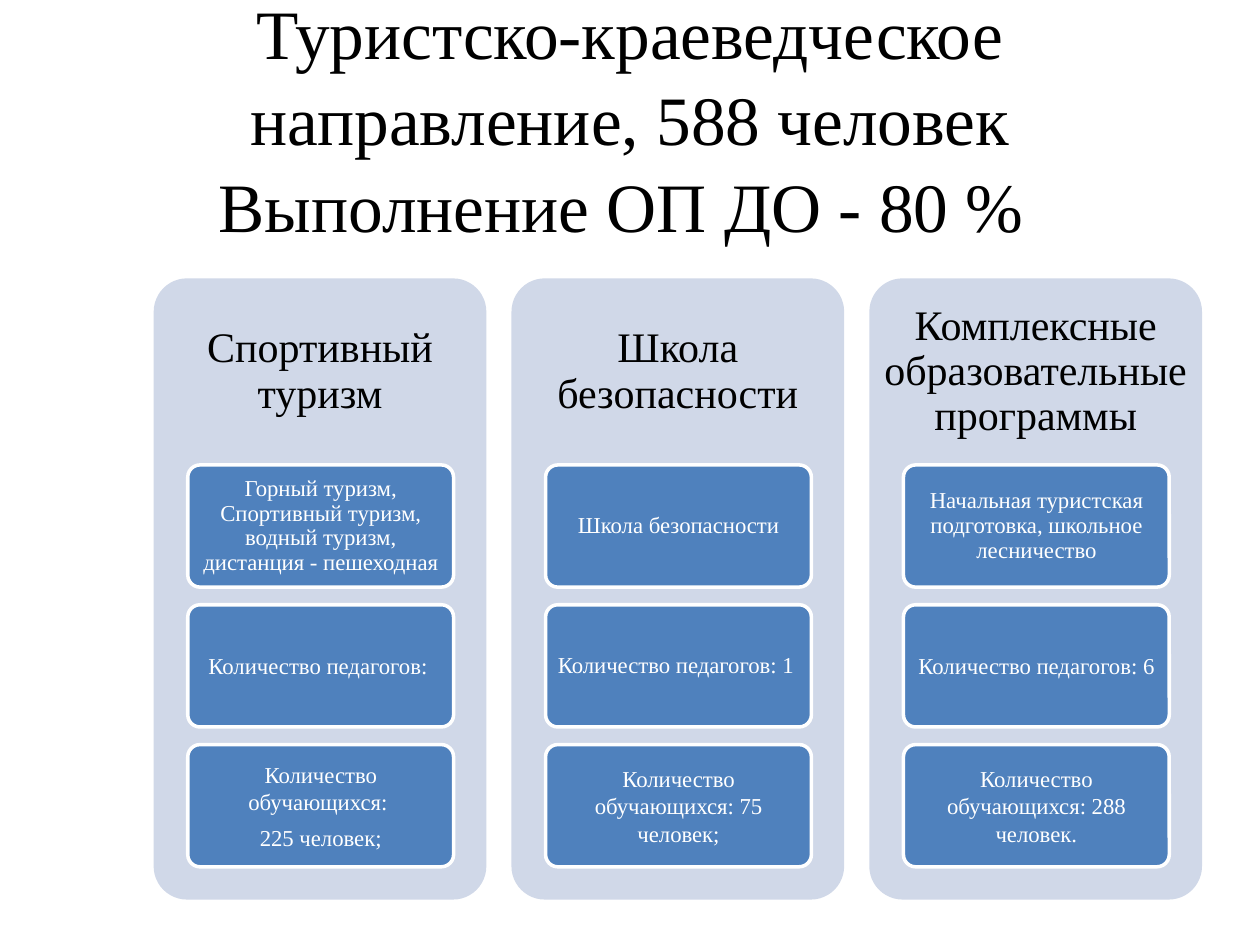
import dataclasses

import pptx
import pptx.dml.color
import pptx.enum.shapes
import pptx.enum.text
import pptx.util
from pptx.util import Inches


@dataclasses.dataclass(frozen=True)
class Theme:
    font: str = "Times New Roman"
    dark: str = "000000"
    light: str = "FFFFFF"
    panel: str = "D0D8E8"
    card: str = "4F81BD"
    title_size: float = 39.6
    heading_size: float = 24
    card_size: float = 13
    outline: float = 2
    tight: float = 0.9


THEME = Theme()

TITLE = "Туристско-краеведческое направление, 588 человек\vВыполнение ОП ДО - 80 % "

DIRECTIONS = [
    ("Спортивный туризм", [
        ("Горный туризм, Спортивный туризм, водный туризм, дистанция - пешеходная", THEME.tight),
        ("Количество педагогов: ", 1.0),
        ("Количество обучающихся: \n225 человек;", 1.0),
    ]),
    ("Школа безопасности", [
        ("Школа безопасности", THEME.tight),
        ("Количество педагогов: 1 ", THEME.tight),
        ("Количество обучающихся: 75 человек;", 1.0),
    ]),
    ("Комплексные образовательные программы", [
        ("Начальная туристская подготовка, школьное лесничество", THEME.tight),
        ("Количество педагогов: 6", 1.0),
        ("Количество обучающихся: 288 человек.", 1.0),
    ]),
]

PANEL_LEFT, PANEL_TOP, PANEL_WIDTH, PANEL_HEIGHT = 1.22, 2.21, 2.64, 4.93
PANEL_STEP = 2.84
HEADING_HEIGHT = 1.48
CARD_INDENT, CARD_WIDTH, CARD_HEIGHT = 0.27, 2.11, 0.97
CARD_STEP = 1.11


def rgb(code):
    return pptx.dml.color.RGBColor.from_string(code)


def write_text(holder, text, *, size, color, line_spacing=1.0, margins=(0.1, 0.1)):
    frame = holder.text_frame
    frame.word_wrap = True
    frame.vertical_anchor = pptx.enum.text.MSO_ANCHOR.MIDDLE
    frame.margin_left = frame.margin_right = Inches(margins[0])
    frame.margin_top = frame.margin_bottom = Inches(margins[1])
    frame.text = text
    for paragraph in frame.paragraphs:
        paragraph.alignment = pptx.enum.text.PP_ALIGN.CENTER
        paragraph.line_spacing = line_spacing
        paragraph.font.name = THEME.font
        paragraph.font.size = pptx.util.Pt(size)
        paragraph.font.color.rgb = rgb(color)
    for paragraph in frame.paragraphs[:-1]:
        paragraph.space_after = pptx.util.Pt(0.35 * size)


def add_label(slide, left, top, width, height, text, **text_format):
    label = slide.shapes.add_textbox(
        Inches(left), Inches(top), Inches(width), Inches(height))
    write_text(label, text, **text_format)


def add_rounded(slide, left, top, width, height, fill, outline=None):
    block = slide.shapes.add_shape(
        pptx.enum.shapes.MSO_SHAPE.ROUNDED_RECTANGLE,
        Inches(left), Inches(top), Inches(width), Inches(height))
    block.adjustments[0] = 0.1
    block.shadow.inherit = False
    block.fill.solid()
    block.fill.fore_color.rgb = rgb(fill)
    if outline:
        block.line.color.rgb = rgb(outline)
        block.line.width = pptx.util.Pt(THEME.outline)
    else:
        block.line.fill.background()
    return block


def add_direction(slide, left, heading, facts):
    add_rounded(slide, left, PANEL_TOP, PANEL_WIDTH, PANEL_HEIGHT, THEME.panel)
    add_label(slide, left, PANEL_TOP, PANEL_WIDTH, HEADING_HEIGHT, heading,
              size=THEME.heading_size, color=THEME.dark, line_spacing=THEME.tight)
    for row, (fact, line_spacing) in enumerate(facts):
        top = PANEL_TOP + HEADING_HEIGHT + row * CARD_STEP
        card = add_rounded(slide, left + CARD_INDENT, top, CARD_WIDTH, CARD_HEIGHT,
                           THEME.card, THEME.light)
        write_text(card, fact, size=THEME.card_size, color=THEME.light,
                   line_spacing=line_spacing, margins=(0.04, 0.03))


def main():
    presentation = pptx.Presentation()
    presentation.slide_width = Inches(10)
    presentation.slide_height = Inches(7.5)
    slide = presentation.slides.add_slide(presentation.slide_layouts[6])
    add_label(slide, 0.5, 0.3, 9, 1.25, TITLE, size=THEME.title_size,
              color=THEME.dark, line_spacing=1.04, margins=(0.1, 0.05))
    for column, (heading, facts) in enumerate(DIRECTIONS):
        add_direction(slide, PANEL_LEFT + column * PANEL_STEP, heading, facts)
    presentation.save("out.pptx")


if __name__ == "__main__":
    main()
